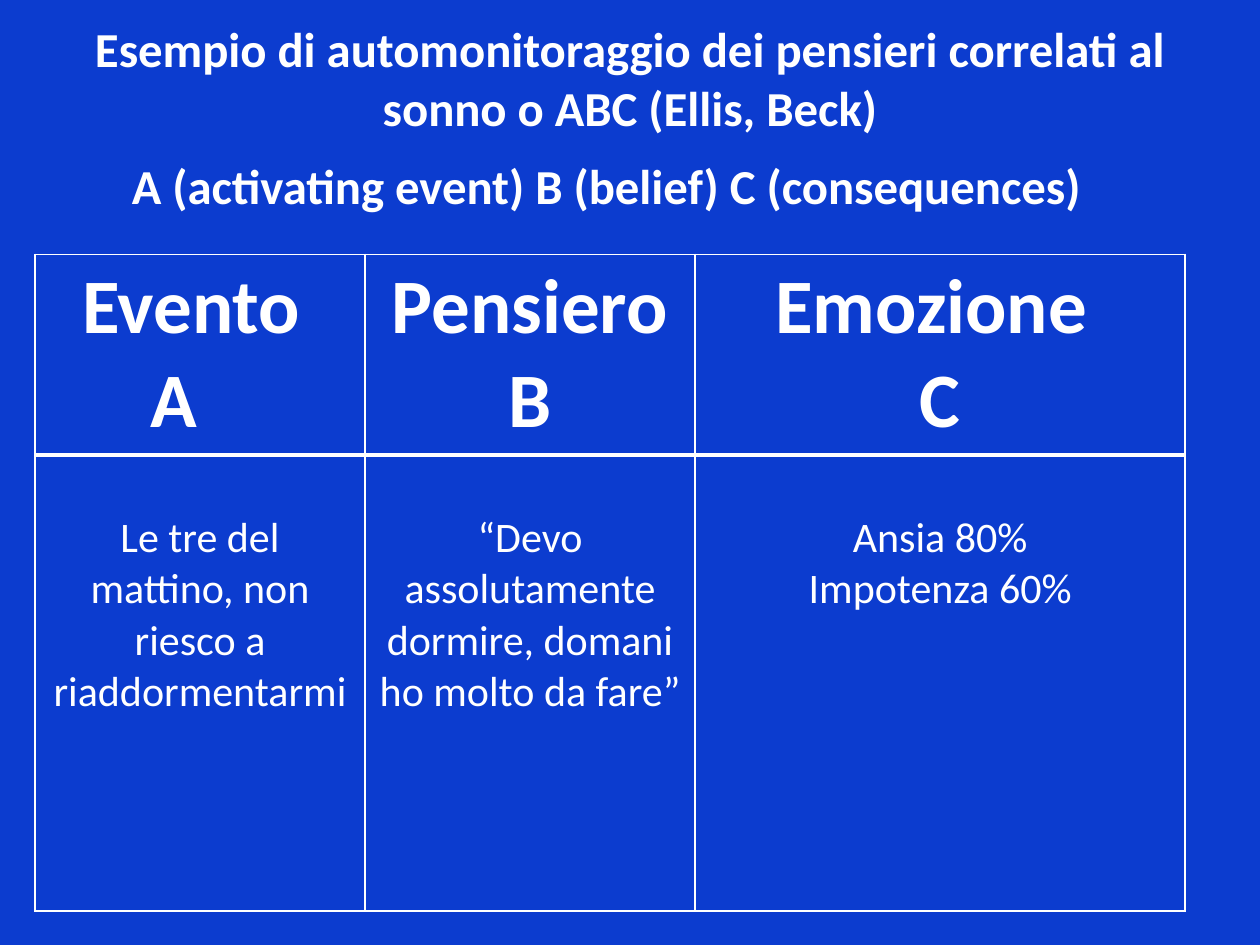
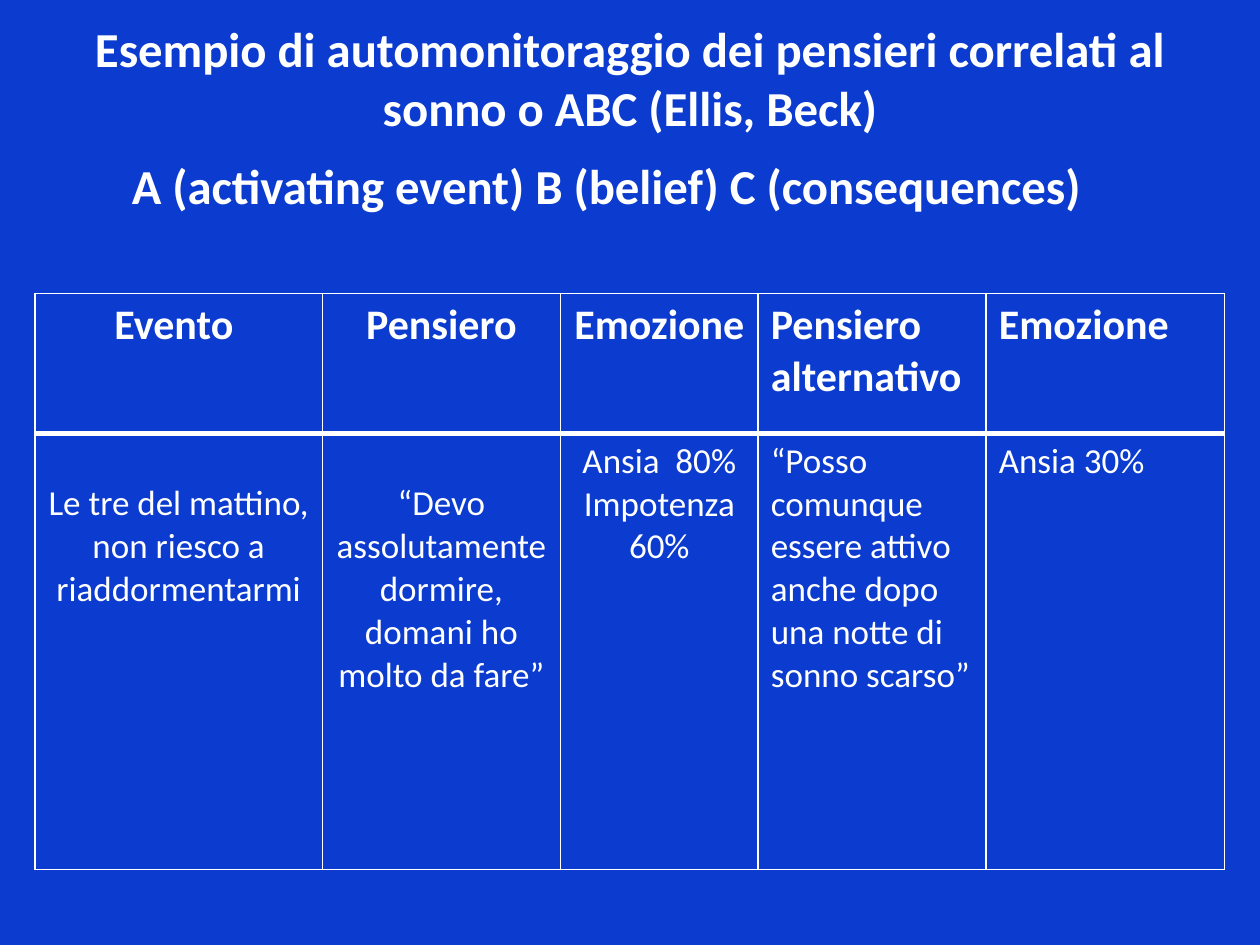
from pptx import Presentation
from pptx.dml.color import RGBColor
from pptx.enum.text import MSO_ANCHOR as Anchor, MSO_AUTO_SIZE as AutoSize, PP_ALIGN as Align
from pptx.oxml import parse_xml
from pptx.oxml.ns import nsdecls
from pptx.util import Pt

# Content: each line is its text, or its text with a right indent
BLUE, WHITE = "0C3CCF", "FFFFFF"
FONT = "Calibri"
TITLE = [
    "Esempio di automonitoraggio dei pensieri correlati al sonno o ABC (Ellis, Beck)",
    ("A (activating event) B (belief) C (consequences)", 27),
]
EVENT = ["Le tre del mattino, non riesco a riaddormentarmi"]
THOUGHT = ["“Devo assolutamente dormire, domani ho molto da fare”"]
ALTERNATIVE = ["“Posso comunque essere attivo anche dopo una notte di sonno scarso”"]

# Columns: width, alignment, heading, body, whether the body starts one line lower
TABLES = [
    dict(top=145.3, rows=(114.5, 260.6), head_size=44, body_size=24, columns=[
        (188.6, Align.CENTER, ["Evento ", ("A", 30)], EVENT, True),
        (188.6, Align.CENTER, ["Pensiero B"], THOUGHT, True),
        (280.1, Align.CENTER, ["Emozione ", "C"], ["Ansia 80%", "Impotenza 60%"], True),
    ]),
    dict(top=167.8, rows=(79.9, 249.1), head_size=24, body_size=20, columns=[
        (164.2, Align.CENTER, ["Evento "], EVENT, True),
        (136.1, Align.CENTER, ["Pensiero"], THOUGHT, True),
        (113, Align.CENTER, ["Emozione"], ["Ansia  80%", "Impotenza 60%"], False),
        (130.3, Align.LEFT, ["Pensiero alternativo"], ALTERNATIVE, False),
        (136.1, Align.LEFT, ["Emozione"], ["Ansia 30%"], False),
    ]),
]
TABLE_LEFT = 20
LINE_HEIGHT = 1.22
CELL_MARGIN = 3.6
THIN, THICK = 1, 3


def color(hex_code):
    return RGBColor.from_string(hex_code)


def write_lines(frame, lines, size, bold, align):
    for index, line in enumerate(lines):
        text, indent = line if isinstance(line, tuple) else (line, 0)
        para = frame.paragraphs[0] if index == 0 else frame.add_paragraph()
        para.alignment = align
        if indent:
            para._p.get_or_add_pPr().set("marR", str(Pt(indent)))
        span = para.add_run()
        span.text = text
        for name, value in dict(name=FONT, size=Pt(size), bold=bold).items():
            setattr(span.font, name, value)
        span.font.color.rgb = color(WHITE)


def set_borders(cell, **widths):
    properties = cell._tc.get_or_add_tcPr()
    for side in "LRTB":
        width = Pt(widths.get(side, THIN))
        properties.append(parse_xml(
            f'<a:ln{side} {nsdecls("a")} w="{width}"><a:solidFill>'
            f'<a:srgbClr val="{WHITE}"/></a:solidFill></a:ln{side}>'))


def add_title(page):
    box = page.shapes.title
    for name, value in dict(left=36, top=21.6, width=648, height=90).items():
        setattr(box, name, Pt(value))
    frame = box.text_frame
    settings = dict(word_wrap=True, auto_size=AutoSize.NONE, vertical_anchor=Anchor.MIDDLE)
    for name, value in settings.items():
        setattr(frame, name, value)
    write_lines(frame, TITLE, 27.9, True, Align.CENTER)
    frame.paragraphs[1].space_before = Pt(11)


def add_diary(page, top, rows, head_size, body_size, columns):
    total_width = sum(column[0] for column in columns)
    table = page.shapes.add_table(
        len(rows), len(columns), Pt(TABLE_LEFT), Pt(top), Pt(total_width), Pt(sum(rows))).table
    table.horz_banding = False
    table.first_row = False
    for row, height in zip(table.rows, rows):
        row.height = Pt(height)
    for index, (width, align, heading, body, lowered) in enumerate(columns):
        table.columns[index].width = Pt(width)
        head_cell, body_cell = table.cell(0, index), table.cell(1, index)
        set_borders(head_cell, B=THICK)
        set_borders(body_cell, T=THICK)
        for cell in (head_cell, body_cell):
            cell.fill.background()
        if lowered:
            body_cell.margin_top = Pt(CELL_MARGIN + LINE_HEIGHT * body_size)
        write_lines(head_cell.text_frame, heading, head_size, True, align)
        write_lines(body_cell.text_frame, body, body_size, False, align)


def main():
    deck = Presentation()
    deck.slide_width, deck.slide_height = Pt(720), Pt(540)
    # Shared background
    backdrop = deck.slide_master.background.fill
    backdrop.solid()
    backdrop.fore_color.rgb = color(BLUE)
    # Slides
    for diary in TABLES:
        page = deck.slides.add_slide(deck.slide_layouts.get_by_name("Title Only"))
        add_title(page)
        add_diary(page, **diary)
    deck.save("out.pptx")


if __name__ == "__main__":
    main()
